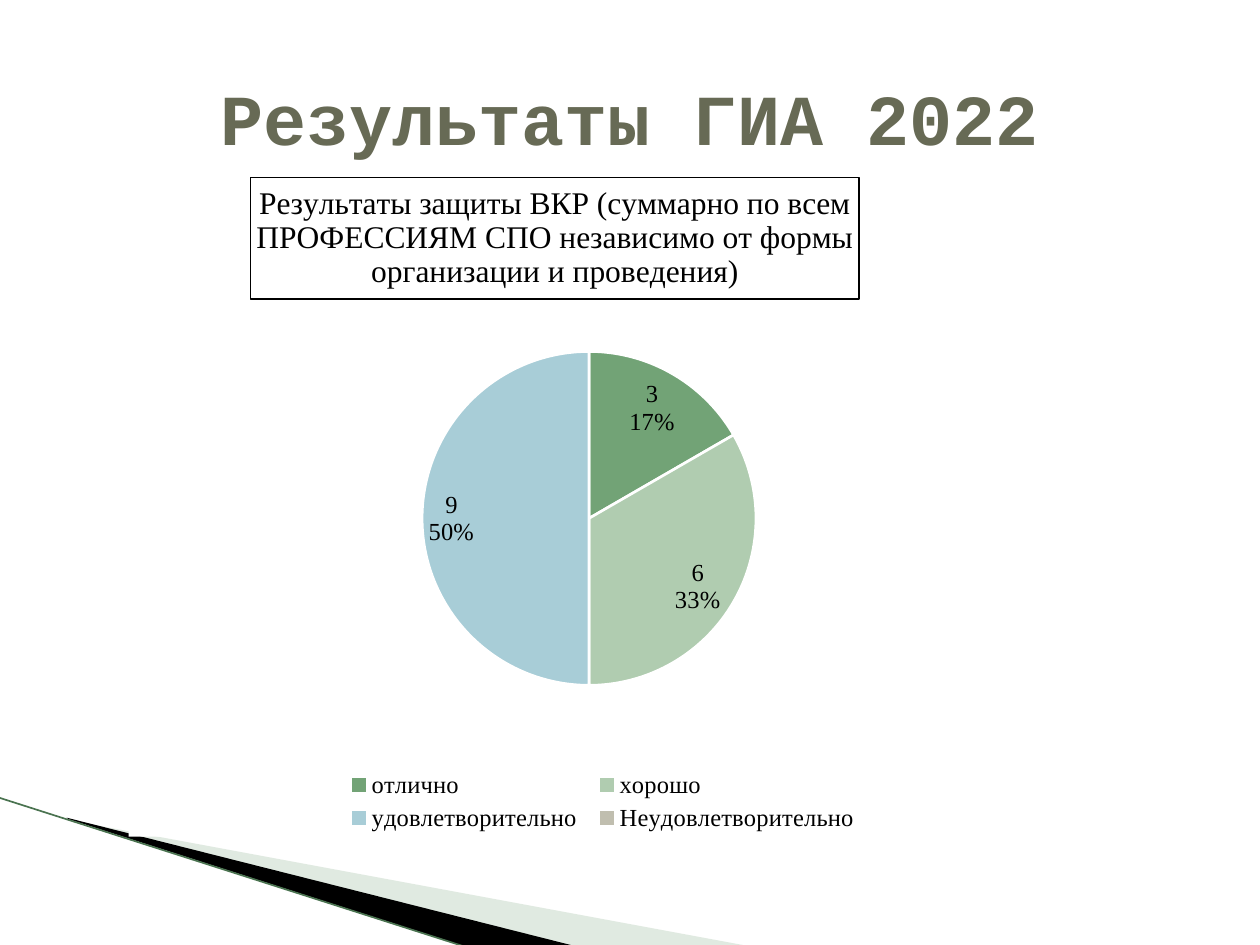
from typing import NamedTuple

from lxml import etree
from pptx import Presentation
from pptx import util as u
from pptx.chart.data import CategoryChartData
from pptx.dml.color import RGBColor
from pptx.enum import chart as ch, shapes, text
from pptx.oxml import parse_xml
from pptx.oxml.ns import nsdecls, qn

COLORS = {"title": "676A55", "text": "000000", "white": "FFFFFF",
          "pale": "B3CBB5", "black": "000000", "edge": "4A7350"}
FONT = "Times New Roman"
CHART_SIZE = (7.58, 5.31)


class Wedge(NamedTuple):
    frame: tuple[float, float, float, float]
    points: list[tuple[float, float]]
    color: str
    alpha: int


class Grade(NamedTuple):
    label: str
    count: int
    color: str


WEDGES = [
    Wedge((0.78, 5.47, 4.16, 1.58),
          [(0.55, 6.51), (5.95, 7.51), (4.56, 7.51), (0.55, 6.5)], "pale", 40),
    Wedge((-0.06, 6.33, 4.16, 0.92),
          [(0.53, 6.49), (4.57, 7.51), (3.72, 7.52), (0.54, 6.5)], "black", 100),
]
GRADES = [
    Grade("отлично", 3, "72A376"),
    Grade("хорошо", 6, "B0CCB0"),
    Grade("удовлетворительно ", 9, "A8CDD7"),
    Grade("Неудовлетворительно ", 0, "C0BEAF"),
]


def rgb(name: str) -> RGBColor:
    return RGBColor.from_string(COLORS.get(name, name))


def set_font(font, size: float, color: str = "text", name: str = FONT,
             bold: bool = False) -> None:
    font.size, font.name, font.bold = u.Pt(size), name, bold
    font.color.rgb = rgb(color)


def draw_wedge(s, wedge: Wedge) -> None:
    """Draw a wedge whose outline reaches beyond its frame."""
    first, *rest = [(u.Inches(x), u.Inches(y)) for x, y in wedge.points]
    builder = s.shapes.build_freeform(*first)
    builder.add_line_segments(rest)
    sp = builder.convert_to_shape()
    left, top, width, height = map(u.Inches, wedge.frame)
    dx, dy = sp.left - left, sp.top - top
    outline = sp._element.spPr.find(".//" + qn("a:path"))
    for pt in outline.iter(qn("a:pt")):
        pt.set("x", str(int(pt.get("x")) + dx))
        pt.set("y", str(int(pt.get("y")) + dy))
    outline.set("w", str(width))
    outline.set("h", str(height))
    sp.left, sp.top, sp.width, sp.height = left, top, width, height
    sp.shadow.inherit = False
    sp.line.fill.background()
    sp.fill.solid()
    sp.fill.fore_color.rgb = rgb(wedge.color)
    if wedge.alpha < 100:
        color = sp._element.spPr.find(".//" + qn("a:srgbClr"))
        etree.SubElement(color, qn("a:alpha")).set("val", str(wedge.alpha * 1000))


def draw_edge(s) -> None:
    line = s.shapes.add_connector(
        shapes.MSO_CONNECTOR.STRAIGHT, u.Inches(-0.01), u.Inches(6.33),
        u.Inches(3.71), u.Inches(7.52))
    line.line.color.rgb = rgb("edge")
    line.line.width = u.Pt(0.95)
    etree.SubElement(line._element.spPr, qn("a:effectLst"))


def draw_title(s) -> None:
    sp = s.shapes.title
    sp.left, sp.top, sp.width, sp.height = map(u.Inches, (0.5, 0.3, 9, 1.25))
    tf = sp.text_frame
    tf.text = "Результаты ГИА 2022"
    tf.vertical_anchor = text.MSO_ANCHOR.MIDDLE
    p = tf.paragraphs[0]
    p.alignment = text.PP_ALIGN.CENTER
    set_font(p.font, 41, "title", "Courier New", True)


def layout_xml(x: float, y: float, size: tuple[float, float] | None = None):
    """Manual chart layout from inches; a size marks the inner plot."""
    w, h = CHART_SIZE
    target = '<c:layoutTarget val="inner"/>' if size else ""
    extent = f'<c:w val="{size[0] / w}"/><c:h val="{size[1] / h}"/>' if size else ""
    return parse_xml(
        f'<c:layout {nsdecls("c")}><c:manualLayout>{target}'
        '<c:xMode val="edge"/><c:yMode val="edge"/>'
        f'<c:x val="{x / w}"/><c:y val="{y / h}"/>{extent}</c:manualLayout></c:layout>')


def place(parent, layout, after: str | None = None) -> None:
    for old in parent.findall(qn("c:layout")):
        parent.remove(old)
    if after:
        parent.find(qn(after)).addnext(layout)
    else:
        parent.insert(0, layout)


def frame_part(parent, fill: str, line: str | None, after: str) -> None:
    """Give a chart part a fill and an optional thin border."""
    stroke = (f'<a:solidFill><a:srgbClr val="{COLORS[line]}"/></a:solidFill>'
              if line else "<a:noFill/>")
    parent.find(qn(after)).addnext(parse_xml(
        f'<c:spPr {nsdecls("c", "a")}><a:solidFill><a:srgbClr val="{COLORS[fill]}"/>'
        f'</a:solidFill><a:ln w="9525">{stroke}</a:ln></c:spPr>'))


def draw_chart(s) -> None:
    data = CategoryChartData()
    data.categories = [g.label for g in GRADES]
    data.add_series("Series 1", [g.count for g in GRADES])
    chart = s.shapes.add_chart(
        ch.XL_CHART_TYPE.PIE, *map(u.Inches, (1.02, 1.33, *CHART_SIZE)), data).chart
    set_font(chart.font, 14)
    frame_part(chart._chartSpace, "white", None, "c:chart")

    tf = chart.chart_title.text_frame
    tf.text = ("Результаты защиты ВКР (суммарно по всем ПРОФЕССИЯМ СПО "
               "независимо от формы организации и проведения)")
    set_font(tf.paragraphs[0].font, 18)
    title = chart.chart_title._element
    chart.chart_title.include_in_layout = False
    place(title, layout_xml(0.97, 0.08), "c:tx")
    frame_part(title, "white", "black", "c:overlay")

    chart.has_legend = True
    chart.legend.position = ch.XL_LEGEND_POSITION.BOTTOM
    chart.legend.include_in_layout = False
    set_font(chart.legend.font, 14)

    plot = chart.plots[0]
    plot.vary_by_categories = True
    place(chart._chartSpace.chart.plotArea, layout_xml(2.33, 1.3, (2.65, 2.97)))
    series = plot.series[0]
    for i, grade in enumerate(GRADES):
        fmt = series.points[i].format
        fmt.fill.solid()
        fmt.fill.fore_color.rgb = rgb(grade.color)
        fmt.line.color.rgb = rgb("white")
        fmt.line.width = u.Pt(1.5)

    labels = series.data_labels
    labels.show_value = labels.show_percentage = True
    labels.position = ch.XL_LABEL_POSITION.BEST_FIT
    set_font(labels.font, 14)
    dlbls = labels._element
    dlbls.find(qn("c:showBubbleSize")).addnext(
        parse_xml(f'<c:separator {nsdecls("c")}>\n</c:separator>'))
    for i, grade in enumerate(GRADES):
        if not grade.count:
            dlbls.insert(0, parse_xml(
                f'<c:dLbl {nsdecls("c")}><c:idx val="{i}"/><c:delete val="1"/></c:dLbl>'))


def main() -> None:
    prs = Presentation()
    prs.slide_width, prs.slide_height = u.Inches(10), u.Inches(7.5)
    s = prs.slides.add_slide(prs.slide_layouts[5])
    for wedge in WEDGES:
        draw_wedge(s, wedge)
    draw_edge(s)
    draw_title(s)
    draw_chart(s)
    prs.save("out.pptx")


if __name__ == "__main__":
    main()
